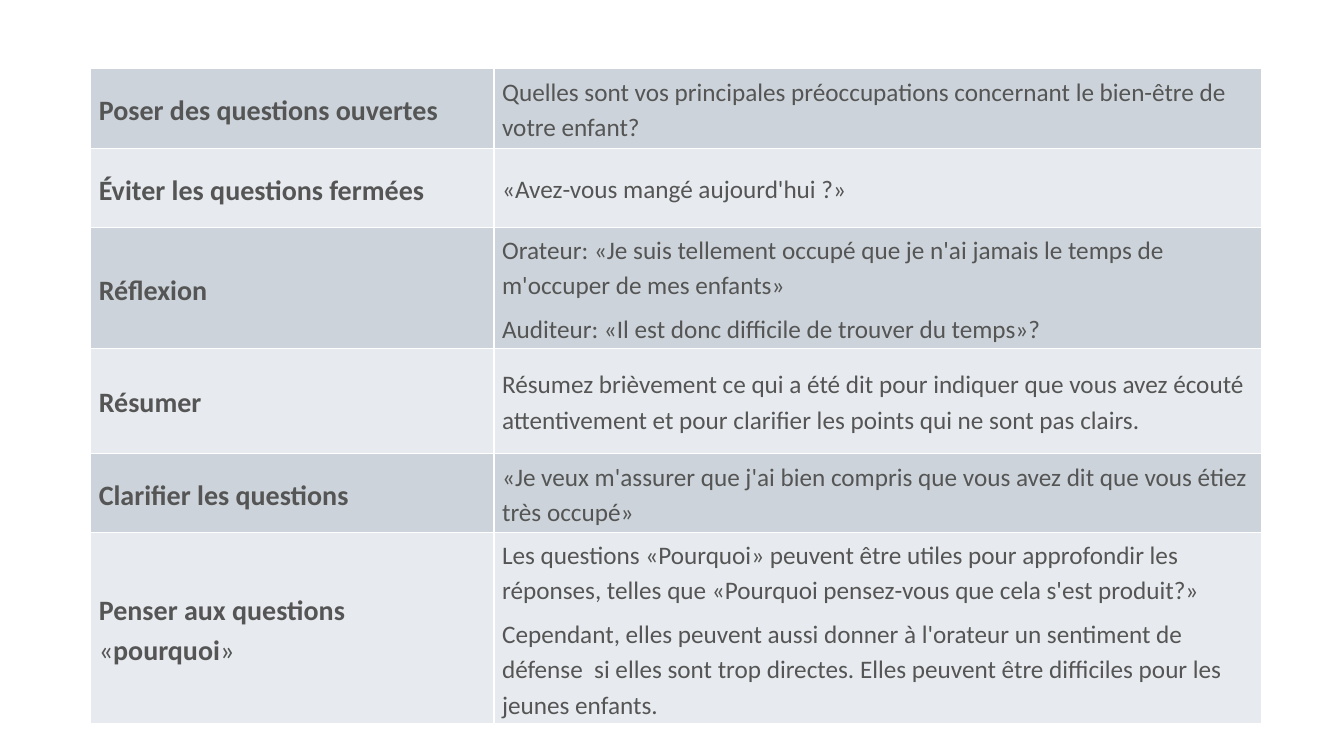
import pptx
import pptx.dml.color
import pptx.enum.text
import pptx.oxml.ns
import pptx.util
from lxml import etree

Inches = pptx.util.Inches
Pt = pptx.util.Pt

COLUMN_WIDTHS = [4, 7.61]
ROW_HEIGHTS = [0.79, 0.79, 0.79, 1.04, 0.79, 1.28]
TECHNIQUES = [
    ([("Poser des questions ouvertes", True)],
     ["Quelles sont vos principales préoccupations concernant le bien-être de votre enfant?"]),
    ([("Éviter les questions fermées", True)],
     ["«Avez-vous mangé aujourd'hui ?»"]),
    ([("Réflexion", True)],
     ["Orateur: «Je suis tellement occupé que je n'ai jamais le temps de m'occuper de mes enfants»",
      "Auditeur: «Il est donc difficile de trouver du temps»?"]),
    ([("Résumer", True)],
     ["Résumez brièvement ce qui a été dit pour indiquer que vous avez écouté attentivement "
      "et pour clarifier les points qui ne sont pas clairs."]),
    ([("Clarifier les questions", True)],
     ["«Je veux m'assurer que j'ai bien compris que vous avez dit que vous étiez très occupé»"]),
    ([("Penser aux questions ", True), ("«", False), ("pourquoi", True), ("»", False)],
     ["Les questions «Pourquoi» peuvent être utiles pour approfondir les réponses, "
      "telles que «Pourquoi pensez-vous que cela s'est produit?»",
      "Cependant, elles peuvent aussi donner à l'orateur un sentiment de défense  si elles sont "
      "trop directes. Elles peuvent être difficiles pour les jeunes enfants."]),
]


def color(value):
    return pptx.dml.color.RGBColor.from_string(value)


def add_text(paragraph, text, *, font, size, ink, bold=False):
    run = paragraph.add_run()
    run.text = text
    run.font.name = font
    run.font.size = Pt(size)
    run.font.bold = bold
    run.font.color.rgb = color(ink)


class TechniqueSlide:
    font = "Calibri"
    ink = "545554"
    bands = ["CCD3DA", "E7EAEE"]
    border = "FFFFFF"

    def __init__(self, slide):
        self.slide = slide

    def add_borders(self, cell):
        properties = cell._tc.get_or_add_tcPr()
        qn = pptx.oxml.ns.qn
        for side in ("a:lnL", "a:lnR", "a:lnT", "a:lnB"):
            line = etree.SubElement(properties, qn(side), w=str(Pt(1)))
            fill = etree.SubElement(line, qn("a:solidFill"))
            etree.SubElement(fill, qn("a:srgbClr"), val=self.border)

    def fill_cell(self, cell, paragraphs, size, band):
        self.add_borders(cell)
        cell.fill.solid()
        cell.fill.fore_color.rgb = color(band)
        cell.vertical_anchor = pptx.enum.text.MSO_ANCHOR.MIDDLE
        cell.margin_left = cell.margin_right = Inches(0.08)
        cell.margin_top = cell.margin_bottom = Inches(0.03)
        for index, runs in enumerate(paragraphs):
            frame = cell.text_frame
            paragraph = frame.add_paragraph() if index else frame.paragraphs[0]
            paragraph.line_spacing = 1.15
            paragraph.space_after = Pt(6)
            for text, bold in runs:
                add_text(paragraph, text, font=self.font, size=size, ink=self.ink, bold=bold)

    def add_table(self, left, top, techniques):
        table = self.slide.shapes.add_table(
            len(techniques), len(COLUMN_WIDTHS), Inches(left), Inches(top),
            Inches(sum(COLUMN_WIDTHS)), Inches(sum(ROW_HEIGHTS))).table
        table.first_row = False
        table.horz_banding = False
        for column, width in zip(table.columns, COLUMN_WIDTHS):
            column.width = Inches(width)
        for index, (heading, examples) in enumerate(techniques):
            table.rows[index].height = Inches(ROW_HEIGHTS[index])
            band = self.bands[index % 2]
            self.fill_cell(table.cell(index, 0), [heading], 20, band)
            self.fill_cell(table.cell(index, 1), [[(text, False)] for text in examples], 18, band)


def main():
    presentation = pptx.Presentation()
    presentation.slide_width = Inches(13.33)
    presentation.slide_height = Inches(7.5)
    slide = presentation.slides.add_slide(presentation.slide_layouts[6])
    TechniqueSlide(slide).add_table(0.9, 0.68, TECHNIQUES)
    presentation.save("out.pptx")


if __name__ == "__main__":
    main()
